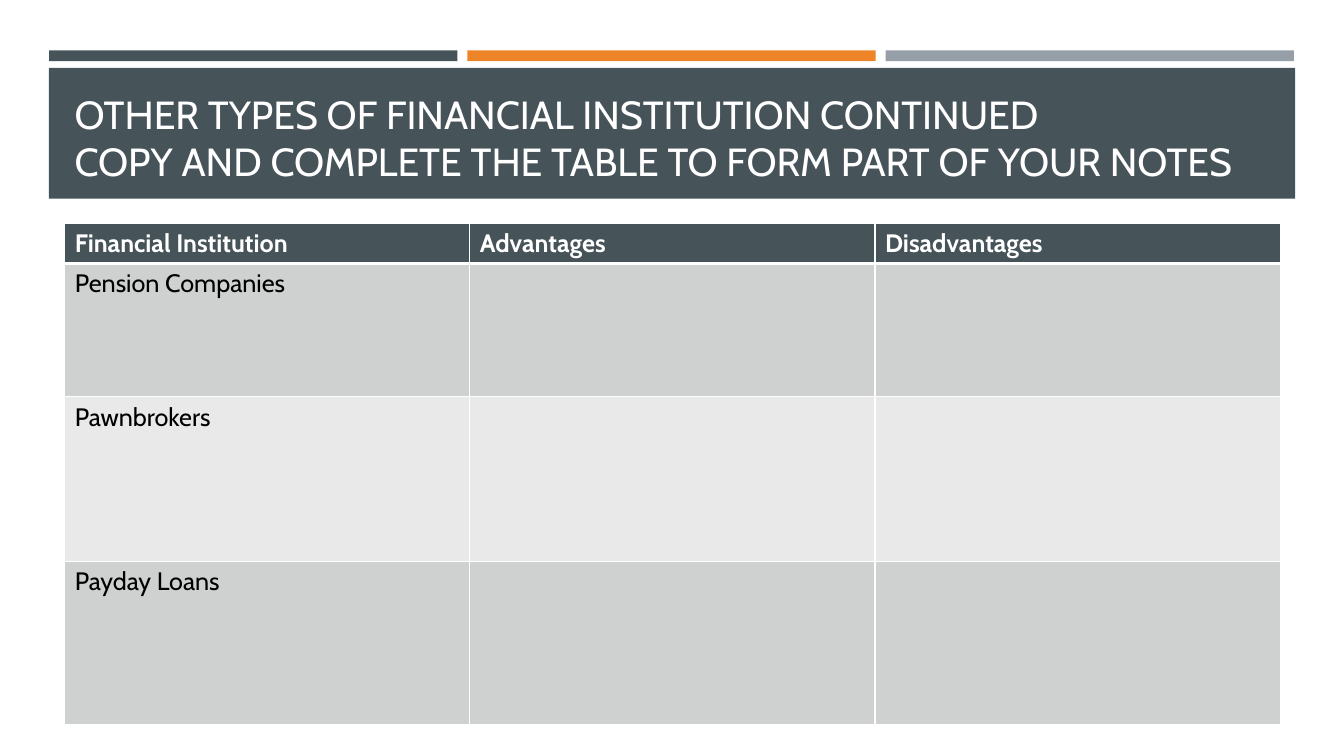
from dataclasses import dataclass

from lxml import etree
from pptx import Presentation
from pptx.dml.color import RGBColor
from pptx.enum.shapes import MSO_SHAPE
from pptx.enum.text import MSO_ANCHOR
from pptx.oxml.ns import qn
from pptx.slide import Slide
from pptx.table import _Cell
from pptx.text.text import _Paragraph
from pptx.util import Cm, Pt

RECT = MSO_SHAPE.RECTANGLE
BOTTOM = MSO_ANCHOR.BOTTOM


@dataclass(frozen=True)
class Theme:
    font: str = "Cabin"
    slate: str = "465359"
    orange: str = "ED8428"
    gray: str = "969FA7"
    white: str = "FFFFFF"
    black: str = "000000"
    dark: str = "CFD1D1"
    light: str = "E9E9EA"
    title: int = 28
    body: int = 18


@dataclass(frozen=True)
class Box:
    left: float
    top: float
    width: float
    height: float
    fill: str


@dataclass(frozen=True)
class Row:
    height: float
    fill: str
    color: str
    bold: bool
    rule: float
    texts: tuple[str, str, str]


THEME = Theme()
BAR_LEFT, BAR_STEP = 1.24, 10.54
BARS = [
    Box(BAR_LEFT + BAR_STEP * i, 1.27, 10.29, 0.27, fill)
    for i, fill in enumerate((THEME.slate, THEME.orange, THEME.gray))
]
BAND = Box(1.23, 1.71, 31.41, 3.3, THEME.slate)
LEFT, WIDTH = 1.63, 30.63
TITLE = (
    "OTHER TYPES OF FINANCIAL INSTITUTION CONTINUED\n"
    "COPY AND COMPLETE THE TABLE TO FORM PART OF YOUR NOTES"
)
ROWS = [
    Row(1.02, THEME.slate, THEME.white, True, 3,
        ("Financial Institution", "Advantages", "Disadvantages")),
    Row(3.36, THEME.dark, THEME.black, False, 1, ("Pension Companies", "", "")),
    Row(4.14, THEME.light, THEME.black, False, 1, ("Pawnbrokers", "", "")),
    Row(4.12, THEME.dark, THEME.black, False, 1, ("Payday Loans", "", "")),
]


def style(para: _Paragraph, size: int, color: str, bold: bool = False) -> None:
    for run in para.runs:
        run.font.name = THEME.font
        run.font.size = Pt(size)
        run.font.bold = bold
        run.font.color.rgb = RGBColor.from_string(color)


def add_box(slide: Slide, box: Box) -> None:
    shape = slide.shapes.add_shape(
        RECT, Cm(box.left), Cm(box.top), Cm(box.width), Cm(box.height)
    )
    shape.shadow.inherit = False
    shape.fill.solid()
    shape.fill.fore_color.rgb = RGBColor.from_string(box.fill)
    shape.line.fill.background()


def add_title(slide: Slide) -> None:
    frame = slide.shapes.add_textbox(
        Cm(LEFT), Cm(1.95), Cm(WIDTH), Cm(2.82)
    ).text_frame
    frame.word_wrap = True
    frame.vertical_anchor = BOTTOM
    para = frame.paragraphs[0]
    para.text = TITLE
    style(para, THEME.title, THEME.white)


def set_edges(cell: _Cell, upper: float, lower: float) -> None:
    props = cell._tc.get_or_add_tcPr()
    edges = (("lnL", 1), ("lnR", 1), ("lnT", upper), ("lnB", lower))
    for index, (tag, width) in enumerate(edges):
        line = etree.Element(qn(f"a:{tag}"), w=str(Pt(width)))
        fill = etree.SubElement(line, qn("a:solidFill"))
        etree.SubElement(fill, qn("a:srgbClr"), val=THEME.white)
        props.insert(index, line)


def add_table(slide: Slide) -> None:
    high = sum(row.height for row in ROWS)
    count = len(ROWS[0].texts)
    table = slide.shapes.add_table(
        len(ROWS), count, Cm(LEFT), Cm(5.62), Cm(WIDTH), Cm(high)
    ).table
    upper = 1
    for line, row in zip(table.rows, ROWS):
        line.height = Cm(row.height)
        for cell, text in zip(line.cells, row.texts):
            cell.fill.solid()
            cell.fill.fore_color.rgb = RGBColor.from_string(row.fill)
            set_edges(cell, upper, row.rule)
            para = cell.text_frame.paragraphs[0]
            if text:
                para.text = text
                style(para, THEME.body, row.color, row.bold)
        upper = row.rule


def main() -> None:
    deck = Presentation()
    deck.slide_width = Cm(33.87)
    deck.slide_height = Cm(19.05)
    slide = deck.slides.add_slide(deck.slide_layouts[6])
    for box in [*BARS, BAND]:
        add_box(slide, box)
    add_title(slide)
    add_table(slide)
    deck.save("out.pptx")


if __name__ == "__main__":
    main()
